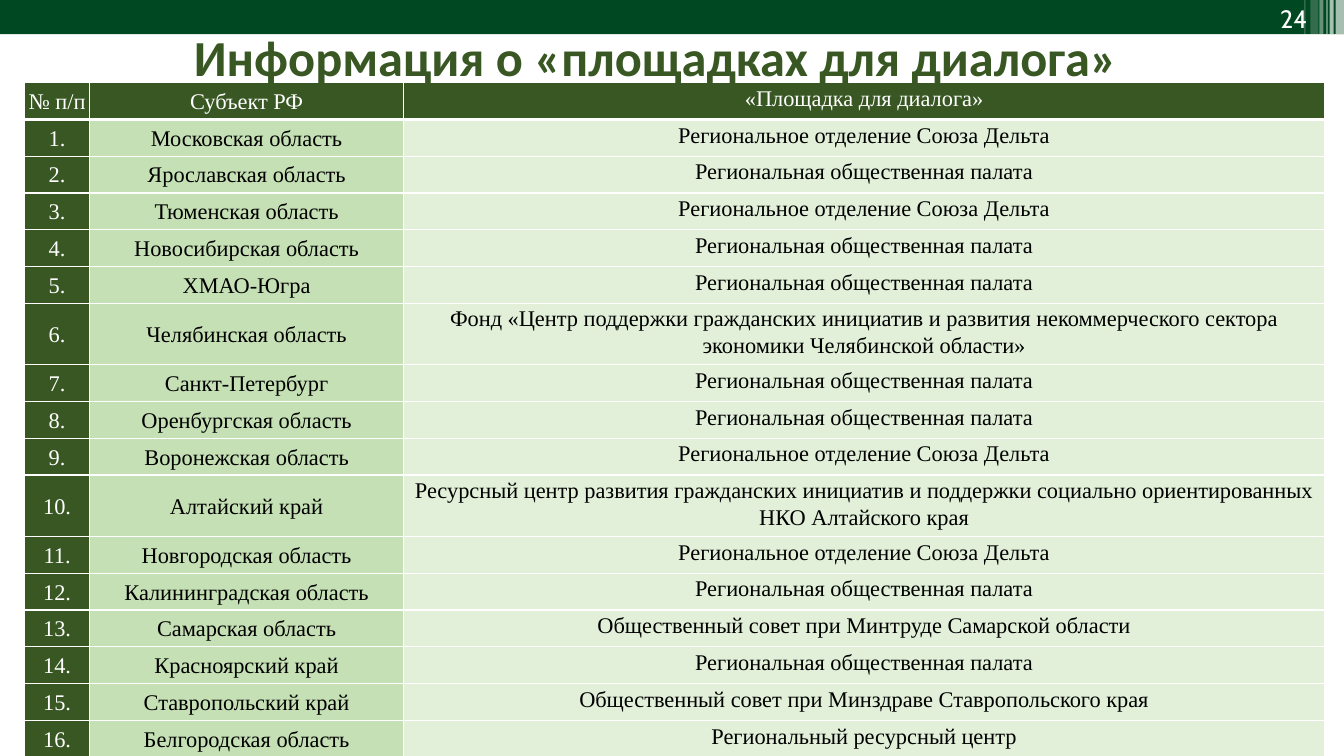
from lxml import etree
from pptx import Presentation, util as u
from pptx.dml.color import RGBColor
from pptx.enum import shapes, text
from pptx.oxml import ns

Pt = u.Pt
HUE = {"bar": "004821", "dark": "385723", "mid": "C5E0B4", "pale": "E2F0D9",
       "white": "FFFFFF", "black": "000000"}
MID, TOP = text.MSO_ANCHOR.MIDDLE, text.MSO_ANCHOR.TOP
MAIN = ns.nsdecls("a")


def write(frame, words, size=16, font="Times New Roman", hue="black",
          bold=False, align=text.PP_ALIGN.CENTER, lead=1.07):
    """Fill a text frame with one formatted paragraph."""
    para = frame.paragraphs[0]
    para.alignment, para.line_spacing = align, lead
    run = para.add_run()
    run.text = words
    run.font.size, run.font.name, run.font.bold = Pt(size), font, bold
    run.font.color.rgb = RGBColor.from_string(HUE[hue])


def inset(box, gap, anchor):
    """Set equal margins and the anchor of a cell or a text frame."""
    box.margin_left = box.margin_right = Pt(gap)
    box.margin_top = box.margin_bottom = Pt(gap)
    box.vertical_anchor = anchor


deck = Presentation()
deck.slide_width, deck.slide_height = Pt(960), Pt(540)
slide = deck.slides.add_slide(deck.slide_layouts[5])

# Top band with its pale stripes: left, width, height, hue, opacity in percent
bands = [(0, 960, 24.5, "bar", 100), (954, 6, 24.5, "white", 65),
         (949.7, 2.9, 24.5, "white", 65), (947.5, 0.8, 24.5, "white", 60),
         (942.5, 2.9, 24.5, "white", 40), (936, 5.8, 26, "white", 20),
         (931.7, 0.8, 26, "white", 30)]
for left, wide, high, hue, pct in bands:
    band = slide.shapes.add_shape(shapes.MSO_SHAPE.RECTANGLE,
                                  Pt(left), Pt(0), Pt(wide), Pt(high))
    band.shadow.inherit = False
    band.line.fill.background()
    band.fill.solid()
    band.fill.fore_color.rgb = RGBColor.from_string(HUE[hue])
    if pct < 100:
        tint = band.element.find(".//" + ns.qn("a:srgbClr"))
        etree.SubElement(tint, ns.qn("a:alpha"), val=str(pct * 1000))

page = slide.shapes.add_textbox(Pt(854.6), Pt(0), Pt(86.4), Pt(26.6)).text_frame
page.word_wrap = True
inset(page, 3.6, MID)
page.margin_left = page.margin_right = Pt(7.2)
write(page, "24", size=18, font="Cabin", hue="white",
      align=text.PP_ALIGN.RIGHT, lead=1)

# Table
branch = "Региональное отделение Союза Дельта"
house = "Региональная общественная палата"
sites = [
    ("Московская область", branch),
    ("Ярославская область", house),
    ("Тюменская область", branch),
    ("Новосибирская область", house),
    ("ХМАО-Югра", house),
    ("Челябинская область", "Фонд «Центр поддержки гражданских инициатив и развития "
     "некоммерческого сектора экономики Челябинской области»"),
    ("Санкт-Петербург", house),
    ("Оренбургская область", house),
    ("Воронежская область", branch),
    ("Алтайский край", "Ресурсный центр развития гражданских инициатив и поддержки "
     "социально ориентированных НКО Алтайского края"),
    ("Новгородская область", branch),
    ("Калининградская область", house),
    ("Самарская область", "Общественный совет при Минтруде Самарской области"),
    ("Красноярский край", house),
    ("Ставропольский край", "Общественный совет при Минздраве Ставропольского края"),
    ("Белгородская область", "Региональный ресурсный центр"),
]
rows = [("№ п/п", "Субъект РФ", "«Площадка для диалога»")]
rows += [(f"{num}.", *site) for num, site in enumerate(sites, 1)]
highs = [40.3 if len(row[2]) > 80 else 26.3 for row in rows]

grid = slide.shapes.add_table(len(rows), 3, Pt(17.5), Pt(59),
                              Pt(928.8), Pt(sum(highs))).table
grid.horz_banding = False
for col, wide in zip(grid.columns, (46.6, 224.2, 658)):
    col.width = Pt(wide)

for r, row in enumerate(rows):
    grid.rows[r].height = Pt(highs[r])
    for c, words in enumerate(row):
        cell = grid.cell(r, c)
        inset(cell, 1.4, TOP if c == 2 else MID)
        head = r == 0 or c == 0
        write(cell.text_frame, words, hue="white" if head else "black")
        props = cell._tc.get_or_add_tcPr()
        for side in "LRTB":
            thick = 3 if (r, side) in ((0, "B"), (1, "T")) else 1
            props.append(etree.fromstring(
                f'<a:ln{side} {MAIN} w="{Pt(thick)}"><a:solidFill>'
                f'<a:srgbClr val="{HUE["white"]}"/></a:solidFill></a:ln{side}>'))
        cell.fill.solid()
        shade = "dark" if head else ("mid" if c == 1 else "pale")
        cell.fill.fore_color.rgb = RGBColor.from_string(HUE[shade])

# Title, in front of the table
title = slide.shapes.title
title.left, title.top, title.width, title.height = Pt(17.5), Pt(14.4), Pt(910), Pt(56.9)
title.text_frame.auto_size = text.MSO_AUTO_SIZE.NONE
title.text_frame.word_wrap = True
inset(title.text_frame, 7.2, MID)
write(title.text_frame, "Информация о «площадках для диалога» ", size=36,
      font="Calibri", hue="dark", bold=True, lead=0.9)
title.element.getparent().append(title.element)

deck.save("out.pptx")
